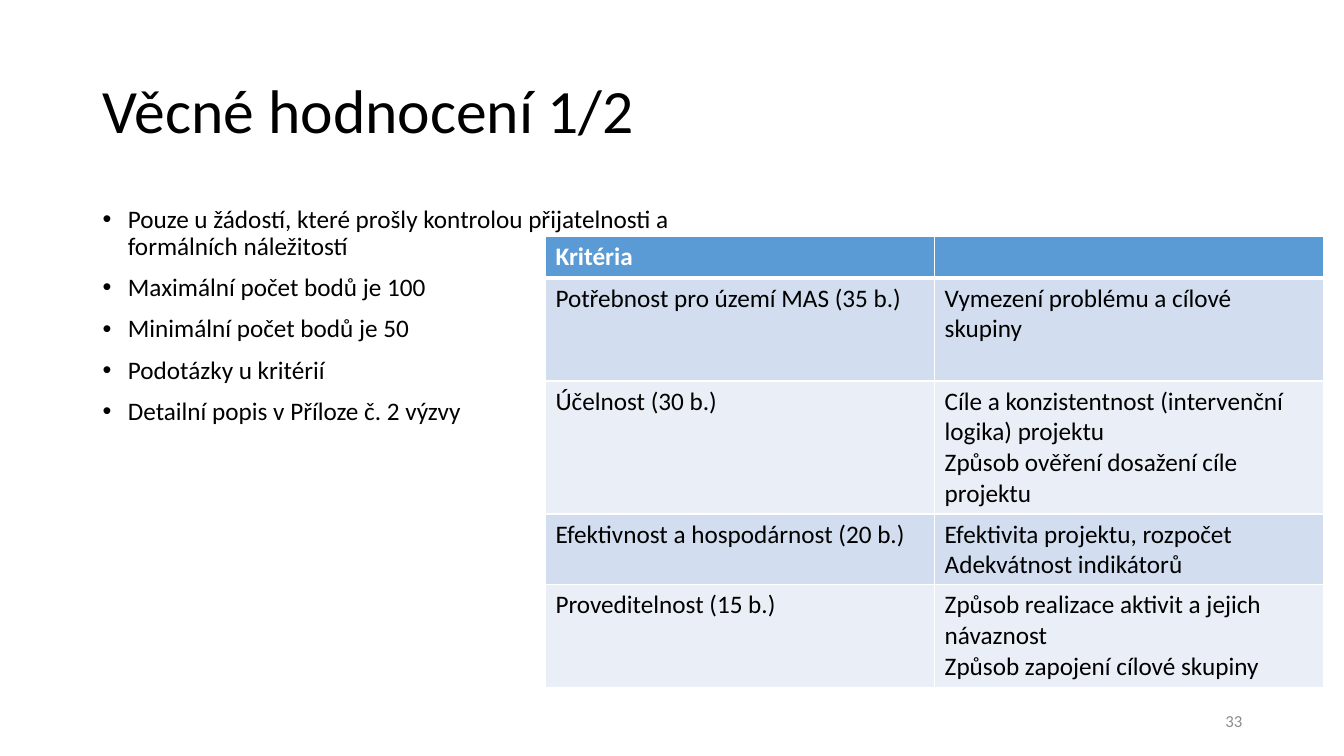
from lxml import etree
from pptx import Presentation
from pptx import util as u
from pptx.dml.color import RGBColor
from pptx.enum import text
from pptx.oxml import ns

PX = 9144  # 100 px to the inch
FONT = "Calibri"
BLACK = RGBColor(0x00, 0x00, 0x00)
WHITE = RGBColor(0xFF, 0xFF, 0xFF)
GREY = RGBColor(0x8C, 0x8C, 0x8C)
BLUE = RGBColor(0x5B, 0x9B, 0xD5)
BANDS = [RGBColor(0xD2, 0xDE, 0xEF), RGBColor(0xEA, 0xEF, 0xF7)]

POINTS = [
    "Pouze u žádostí, které prošly kontrolou přijatelnosti a formálních náležitostí",
    "Maximální počet bodů je 100",
    "Minimální počet bodů je 50",
    "Podotázky u kritérií",
    "Detailní popis v Příloze č. 2 výzvy",
]
# Row height in px, then the lines of each cell
ROWS = [
    (41, ["Kritéria"], []),
    (102, ["Potřebnost pro území MAS (35 b.)"],
     ["Vymezení problému a cílové skupiny"]),
    (132, ["Účelnost (30 b.)"],
     ["Cíle a konzistentnost (intervenční logika) projektu",
      "Způsob ověření dosažení cíle projektu"]),
    (70, ["Efektivnost a hospodárnost (20 b.)"],
     ["Efektivita projektu, rozpočet", "Adekvátnost indikátorů"]),
    (102, ["Proveditelnost (15 b.)"],
     ["Způsob realizace aktivit a jejich návaznost",
      "Způsob zapojení cílové skupiny"]),
]


def px(*nums):
    return [u.Emu(n * PX) for n in nums]


def write(frame, lines, size=18, color=BLACK, bold=False,
          align=text.PP_ALIGN.LEFT, space=None, before=None, bullet=False):
    frame.word_wrap = True
    for i, line in enumerate(lines):
        para = frame.paragraphs[0] if i == 0 else frame.add_paragraph()
        para.alignment = align
        para.line_spacing = space
        para.space_before = before
        run = para.add_run()
        run.text = line
        font = run.font
        font.name, font.size, font.bold = FONT, u.Pt(size), bold
        font.color.rgb = color
        if bullet:
            props = para._p.get_or_add_pPr()
            props.set("marL", str(25 * PX))
            props.set("indent", str(-25 * PX))
            etree.SubElement(props, ns.qn("a:buFont"), typeface="Arial")
            etree.SubElement(props, ns.qn("a:buChar"), char="•")


def border(cell, side, width):
    line = etree.SubElement(cell._tc.get_or_add_tcPr(), ns.qn("a:ln" + side),
                            w=str(u.Pt(width)))
    fill = etree.SubElement(line, ns.qn("a:solidFill"))
    etree.SubElement(fill, ns.qn("a:srgbClr"), val=str(WHITE))


def add_title(slide, words):
    title = slide.shapes.title
    title.left, title.top, title.width, title.height = px(92, 40, 1150, 145)
    title.text_frame.vertical_anchor = text.MSO_ANCHOR.MIDDLE
    write(title.text_frame, [words], size=44, space=0.9)


def add_points(slide):
    frame = slide.shapes.add_textbox(*px(92, 200, 1150, 476)).text_frame
    frame._txBody.bodyPr.set("numCol", "2")
    write(frame, POINTS, space=0.9, before=u.Pt(10), bullet=True)


def add_number(slide, number):
    frame = slide.shapes.add_textbox(*px(942, 695, 300, 40)).text_frame
    frame.vertical_anchor = text.MSO_ANCHOR.MIDDLE
    write(frame, [number], size=12, color=GREY, align=text.PP_ALIGN.RIGHT)


def add_grid(slide):
    high = sum(row[0] for row in ROWS)
    table = slide.shapes.add_table(len(ROWS), 2, *px(541, 235, 772, high)).table
    for col in table.columns:
        col.width = u.Emu(386 * PX)
    for i, (tall, *cells) in enumerate(ROWS):
        head = i == 0
        table.rows[i].height = u.Emu(tall * PX)
        for j, lines in enumerate(cells):
            cell = table.cell(i, j)
            write(cell.text_frame, lines, color=WHITE if head else BLACK, bold=head)
            for side in "LRTB":
                thick = side == "B" and head or side == "T" and i == 1
                border(cell, side, 3 if thick else 1)
            cell.fill.solid()
            cell.fill.fore_color.rgb = BLUE if head else BANDS[(i - 1) % 2]


def main():
    deck = Presentation()
    deck.slide_width, deck.slide_height = px(1333, 750)
    slide = deck.slides.add_slide(deck.slide_layouts[5])  # title only
    add_title(slide, "Věcné hodnocení 1/2")
    add_points(slide)
    add_number(slide, "33")
    add_grid(slide)
    deck.save("out.pptx")


if __name__ == "__main__":
    main()
